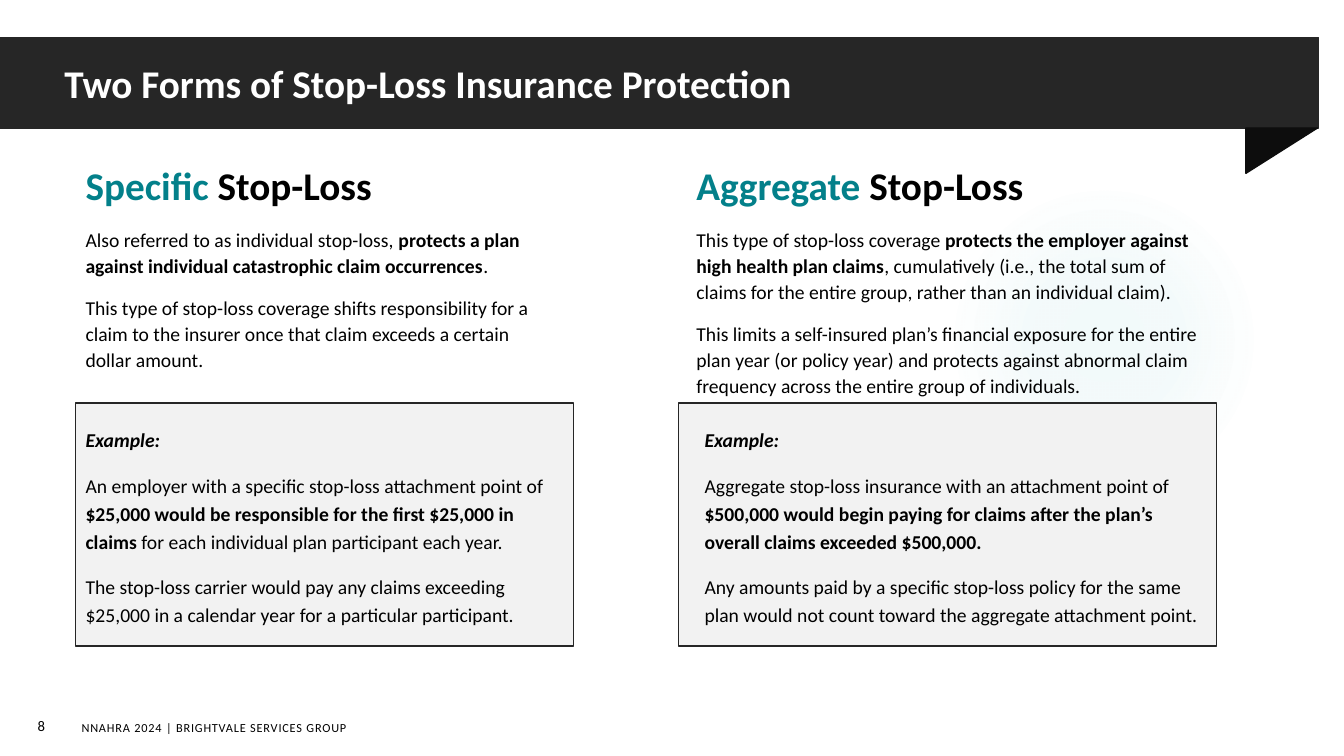
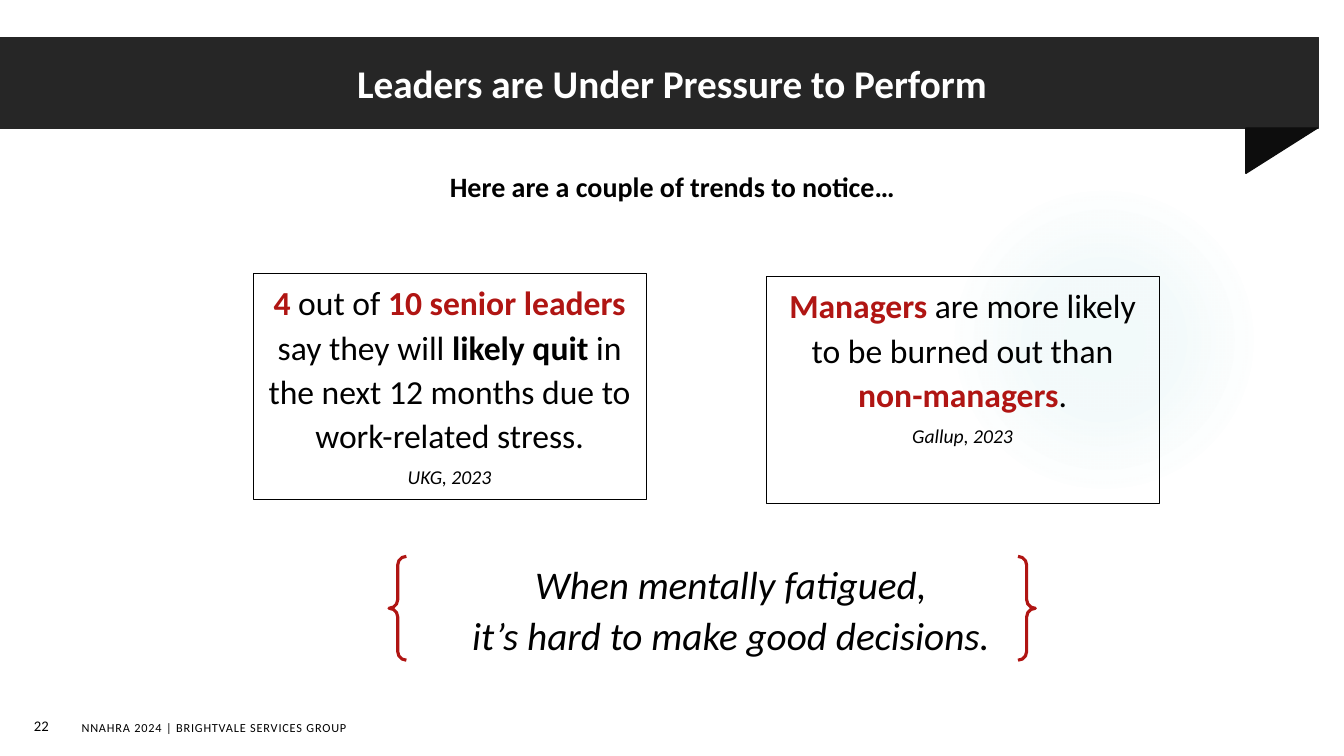
from dataclasses import dataclass
from typing import NamedTuple, Optional

from lxml.etree import SubElement
from pptx import Presentation
from pptx.dml.color import RGBColor
from pptx.enum.shapes import MSO_SHAPE
from pptx.enum.text import MSO_ANCHOR, MSO_AUTO_SIZE, PP_ALIGN
from pptx.oxml import parse_xml
from pptx.oxml.ns import nsdecls, qn
from pptx.shapes.autoshape import Shape
from pptx.slide import Slide
from pptx.util import Inches, Pt

SLIDE_WIDTH = Inches(13.33)
SLIDE_HEIGHT = Inches(7.5)
FONT = "Calibri"
COLORS = {
    "white": "FFFFFF",
    "black": "000000",
    "band": "262626",
    "fold": "0D0D0D",
    "panel": "F2F2F2",
    "teal": "03808A",
    "red": "B01513",
    "glow": "50B9C1",
}
GLOW_STOPS = ((0, 7), (36, 6), (69, 0))
FOOTER = "NNAHRA 2024 | BRIGHTVALE SERVICES GROUP"


class Box(NamedTuple):
    """Left, top, width and height in percent of the slide."""
    left: float
    top: float
    width: float
    height: float


@dataclass(frozen=True)
class Run:
    text: str
    size: float = 14
    color: str = "black"
    bold: bool = False
    italic: bool = False
    tracking: int = 0


@dataclass(frozen=True)
class TextLine:
    runs: tuple[Run, ...]
    align: PP_ALIGN = PP_ALIGN.LEFT
    spacing: float = 1.0
    before: float = 0
    after: float = 0


@dataclass(frozen=True)
class Coverage:
    text_box: Box
    panel_box: Box
    example_box: Box
    kind: str
    description: tuple[tuple[Run, ...], ...]
    example: tuple[tuple[Run, ...], ...]


@dataclass(frozen=True)
class Trend:
    box: Box
    finding: tuple[Run, ...]
    citation: str


COVERAGES = (
    Coverage(
        Box(5.63, 19.47, 36.08, 30.53),
        Box(5.63, 53.33, 37.05, 32.13),
        Box(5.63, 55.33, 37.05, 28.27),
        "Specific ",
        (
            (
                Run("Also referred to as individual stop-loss, "),
                Run("protects a plan against individual catastrophic claim occurrences", bold=True),
                Run("."),
            ),
            (Run("This type of stop-loss coverage shifts responsibility for a claim "
                 "to the insurer once that claim exceeds a certain dollar amount."),),
        ),
        (
            (
                Run("An employer with a specific stop-loss attachment point of "),
                Run("$25,000 would be responsible for the first $25,000 in claims ", bold=True),
                Run("for each individual plan participant each year."),
            ),
            (Run("The stop-loss carrier would pay any claims exceeding $25,000 "
                 "in a calendar year for a particular participant."),),
        ),
    ),
    Coverage(
        Box(51.08, 19.47, 40.05, 34),
        Box(50.48, 53.33, 40.05, 32.13),
        Box(51.68, 55.33, 38.93, 28.27),
        "Aggregate ",
        (
            (
                Run("This type of stop-loss coverage "),
                Run("protects the employer against high health plan claims", bold=True),
                Run(", cumulatively (i.e., the total sum of claims for the entire group, "
                    "rather than an individual claim)."),
            ),
            (Run("This limits a self-insured plan’s financial exposure for the entire plan year "
                 "(or policy year) and protects against abnormal claim frequency across "
                 "the entire group of individuals."),),
        ),
        (
            (
                Run("Aggregate stop-loss insurance with an attachment point of "),
                Run("$500,000 would begin paying for claims after the plan’s "
                    "overall claims exceeded $500,000.", bold=True),
            ),
            (Run("Any amounts paid by a specific stop-loss policy for the same plan "
                 "would not count toward the aggregate attachment point."),),
        ),
    ),
)

TRENDS = (
    Trend(
        Box(18.83, 36.13, 29.25, 30),
        (
            Run("4 ", 24, "red", True),
            Run("out of ", 24),
            Run("10 senior leaders ", 24, "red", True),
            Run("say they will ", 24),
            Run("likely quit ", 24, bold=True),
            Run("in the next 12 months due to work-related stress.", 24),
        ),
        "UKG, 2023",
    ),
    Trend(
        Box(57, 36.53, 29.25, 30.13),
        (
            Run("Managers ", 24, "red", True),
            Run("are more likely to be burned out than ", 24),
            Run("non-managers", 24, "red", True),
            Run(".", 24),
        ),
        "Gallup, 2023",
    ),
)


def color(name: str) -> RGBColor:
    return RGBColor.from_string(COLORS[name])


def place(box: Box) -> tuple[int, int, int, int]:
    return (
        int(SLIDE_WIDTH * box.left / 100),
        int(SLIDE_HEIGHT * box.top / 100),
        int(SLIDE_WIDTH * box.width / 100),
        int(SLIDE_HEIGHT * box.height / 100),
    )


def add_shape(slide: Slide, kind: MSO_SHAPE, box: Box, fill: Optional[str] = None,
              line: Optional[str] = None, weight: float = 1) -> Shape:
    shape = slide.shapes.add_shape(kind, *place(box))
    shape.shadow.inherit = False
    if fill:
        shape.fill.solid()
        shape.fill.fore_color.rgb = color(fill)
    else:
        shape.fill.background()
    if line:
        shape.line.color.rgb = color(line)
        shape.line.width = Pt(weight)
    else:
        shape.line.fill.background()
    return shape


def write(shape: Shape, lines: tuple[TextLine, ...],
          anchor: MSO_ANCHOR = MSO_ANCHOR.TOP, grow: bool = False) -> None:
    frame = shape.text_frame
    frame.word_wrap = True
    frame.auto_size = MSO_AUTO_SIZE.SHAPE_TO_FIT_TEXT if grow else MSO_AUTO_SIZE.NONE
    frame.vertical_anchor = anchor
    for index, line in enumerate(lines):
        paragraph = frame.add_paragraph() if index else frame.paragraphs[0]
        paragraph.alignment = line.align
        paragraph.line_spacing = line.spacing
        paragraph.space_before = Pt(line.before if index else 0)
        paragraph.space_after = Pt(line.after)
        for item in line.runs:
            for part, text in enumerate(item.text.split("\n")):
                if part:
                    paragraph.add_line_break()
                run = paragraph.add_run()
                run.text = text
                run.font.name = FONT
                run.font.size = Pt(item.size)
                run.font.bold = item.bold
                run.font.italic = item.italic
                run.font.color.rgb = color(item.color)
                if item.tracking:
                    run.font._element.set("spc", str(item.tracking))


def add_text(slide: Slide, box: Box, *lines: TextLine,
             anchor: MSO_ANCHOR = MSO_ANCHOR.TOP, grow: bool = False) -> None:
    write(slide.shapes.add_textbox(*place(box)), lines, anchor, grow)


def add_glow(slide: Slide) -> None:
    glow = add_shape(slide, MSO_SHAPE.OVAL, Box(70.58, 24.4, 23.1, 41.07))
    gradient = parse_xml(
        f'<a:gradFill {nsdecls("a")} rotWithShape="1"><a:gsLst/><a:path path="circle">'
        '<a:fillToRect l="50000" t="50000" r="50000" b="50000"/></a:path></a:gradFill>'
    )
    for position, opacity in GLOW_STOPS:
        stop = SubElement(gradient[0], qn("a:gs"), pos=str(position * 1000))
        tint = SubElement(stop, qn("a:srgbClr"), val=COLORS["glow"])
        SubElement(tint, qn("a:alpha"), val=str(opacity * 1000))
    properties = glow.element.spPr
    properties.replace(properties.find(qn("a:noFill")), gradient)


def add_framed_slide(presentation: Presentation, title: str, number: int,
                     title_left: float, align: PP_ALIGN) -> Slide:
    slide = presentation.slides.add_slide(presentation.slide_layouts[6])
    add_glow(slide)
    add_shape(slide, MSO_SHAPE.RECTANGLE, Box(-0.08, 4.93, 98.18, 12), "band", "band")
    fold = add_shape(slide, MSO_SHAPE.RIGHT_TRIANGLE, Box(92.7, 16.93, 5.33, 6), "fold", "fold")
    fold.element.spPr.xfrm.set("flipV", "1")
    add_text(slide, Box(5.33, 94.53, 25.13, 3.33),
             TextLine((Run(FOOTER, 8.8, tracking=60),), after=1),
             anchor=MSO_ANCHOR.MIDDLE, grow=True)
    add_text(slide, Box(1.28, 94.27, 3.6, 3.47),
             TextLine((Run(str(number), 10.5),), PP_ALIGN.CENTER), anchor=MSO_ANCHOR.MIDDLE)
    add_text(slide, Box(title_left, 7.2, 72.38, 8.67),
             TextLine((Run(title, 28, "white", True),), align))
    return slide


def add_coverage(slide: Slide, coverage: Coverage) -> None:
    heading = (Run(coverage.kind, 28, "teal", True), Run("Stop-Loss", 28, bold=True))
    add_text(slide, coverage.text_box,
             TextLine(heading, spacing=1.2, after=6),
             *(TextLine(runs, spacing=1.1, before=6, after=6) for runs in coverage.description),
             grow=True)
    add_shape(slide, MSO_SHAPE.RECTANGLE, coverage.panel_box, "panel", "band")
    label = (Run("Example:", bold=True, italic=True),)
    add_text(slide, coverage.example_box,
             *(TextLine(runs, spacing=1.2, before=6, after=6)
               for runs in (label, *coverage.example)),
             anchor=MSO_ANCHOR.MIDDLE, grow=True)


def add_trend(slide: Slide, trend: Trend) -> None:
    card = add_shape(slide, MSO_SHAPE.RECTANGLE, trend.box, line="black", weight=0.75)
    citation = (Run(trend.citation, italic=True),)
    write(card, tuple(TextLine(runs, PP_ALIGN.CENTER, 1.1, 5.3)
                      for runs in (trend.finding, citation)))


def main() -> None:
    presentation = Presentation()
    presentation.slide_width = SLIDE_WIDTH
    presentation.slide_height = SLIDE_HEIGHT

    forms = add_framed_slide(presentation, "Two Forms of Stop-Loss Insurance Protection",
                             8, 4.05, PP_ALIGN.LEFT)
    for coverage in COVERAGES:
        add_coverage(forms, coverage)

    pressure = add_framed_slide(presentation, "Leaders are Under Pressure to Perform",
                                22, 13.8, PP_ALIGN.CENTER)
    add_text(pressure, Box(28.95, 22.27, 42.15, 6.53),
             TextLine((Run("Here are a couple of trends to notice…", 20, bold=True),),
                      PP_ALIGN.CENTER, 0.9, after=5.3))
    message = Run("When mentally fatigued,\nit’s hard to make good decisions.", 28, italic=True)
    add_text(pressure, Box(34.2, 72.8, 40.35, 15.2),
             TextLine((message,), PP_ALIGN.CENTER, 1.1, after=5.3), grow=True)
    add_shape(pressure, MSO_SHAPE.DOUBLE_BRACE, Box(28.95, 73.6, 48.08, 13.73),
              line="red", weight=2.25)
    for trend in TRENDS:
        add_trend(pressure, trend)

    presentation.save("out.pptx")


if __name__ == "__main__":
    main()
